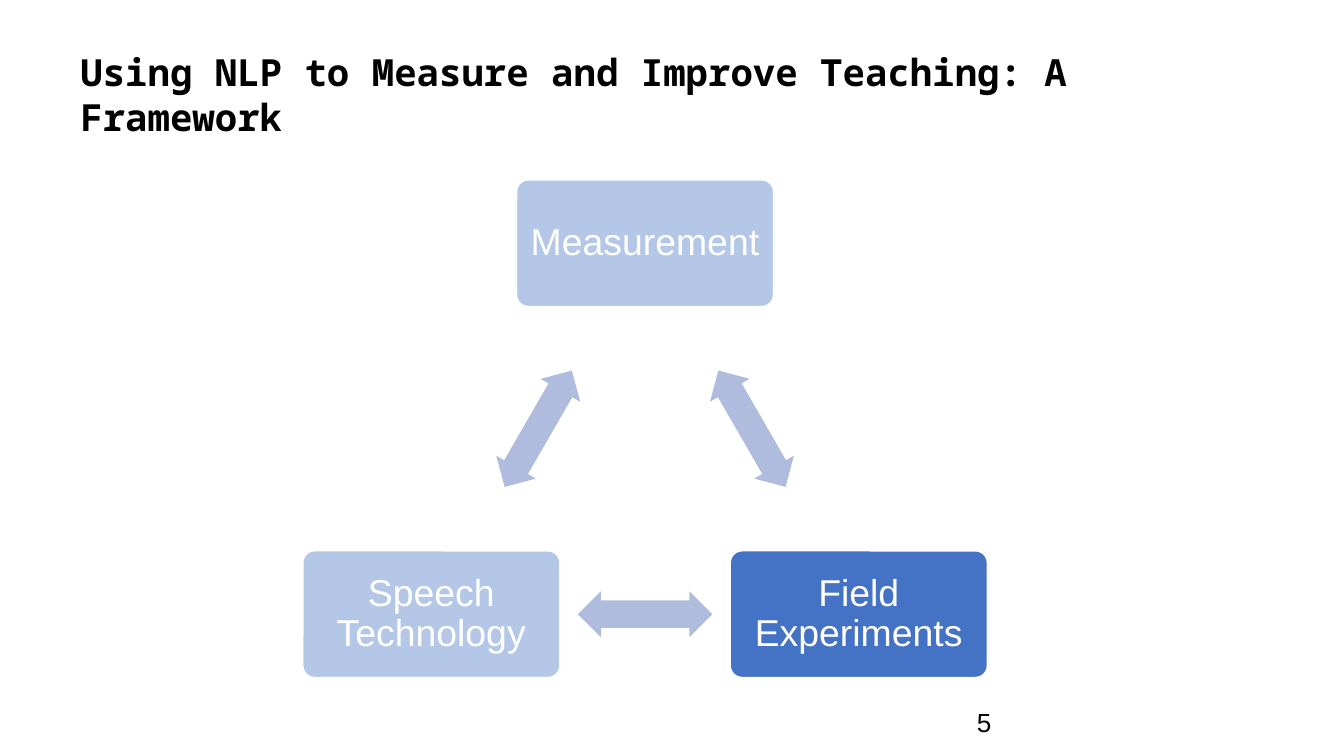
from typing import NamedTuple

from pptx import Presentation
from pptx.dml.color import RGBColor
from pptx.enum.shapes import MSO_SHAPE as Shape
from pptx.enum.text import MSO_ANCHOR as Anchor, PP_ALIGN as Align
from pptx.util import Inches, Pt

BLACK = RGBColor(0x00, 0x00, 0x00)
WHITE = RGBColor(0xFF, 0xFF, 0xFF)
FADED = RGBColor(0xB4, 0xC7, 0xE7)
ACTIVE = RGBColor(0x44, 0x72, 0xC4)
ARROW = RGBColor(0xB0, 0xBC, 0xDE)

NODE_W, NODE_H = 1.93, 0.96
ARROW_W, ARROW_H = 1.0, 0.34


class Node(NamedTuple):
    label: str
    cx: float
    cy: float
    fill: RGBColor


# Corners of the triangle, clockwise from the top
NODES = [
    Node("Measurement", 4.8, 1.81, FADED),
    Node("Field Experiments", 6.39, 4.57, ACTIVE),
    Node("Speech Technology", 3.21, 4.57, FADED),
]
ARROW_ANGLES = [60, 180, 300]


def set_text(shape, text: str, *, size: float = 20, font: str = "Arial",
             color: RGBColor = BLACK, bold: bool = False, align=Align.LEFT,
             anchor=Anchor.TOP, inset_x: float = 0.1, inset_y: float = 0.05,
             spacing: float = 1.0) -> None:
    tf = shape.text_frame
    tf.word_wrap = True
    tf.vertical_anchor = anchor
    tf.margin_left = tf.margin_right = Inches(inset_x)
    tf.margin_top = tf.margin_bottom = Inches(inset_y)
    p = tf.paragraphs[0]
    p.alignment = align
    p.line_spacing = spacing
    r = p.add_run()
    r.text = text
    r.font.size = Pt(size)
    r.font.name = font
    r.font.bold = bold
    r.font.color.rgb = color


def add_centred(s, kind, cx: float, cy: float, w: float, h: float, fill: RGBColor):
    sp = s.shapes.add_shape(kind, Inches(cx - w / 2), Inches(cy - h / 2),
                            Inches(w), Inches(h))
    sp.shadow.inherit = False
    sp.fill.solid()
    sp.fill.fore_color.rgb = fill
    return sp


def add_node(s, node: Node) -> None:
    sp = add_centred(s, Shape.ROUNDED_RECTANGLE, node.cx, node.cy,
                     NODE_W, NODE_H, node.fill)
    sp.adjustments[0] = 0.1
    sp.line.color.rgb = WHITE
    sp.line.width = Pt(2)
    set_text(sp, node.label, color=WHITE, align=Align.CENTER,
             anchor=Anchor.MIDDLE, inset_x=0.05, spacing=0.9)


def add_arrow(s, start: Node, end: Node, angle: float) -> None:
    """Place a double arrow midway between two nodes."""
    sp = add_centred(s, Shape.LEFT_RIGHT_ARROW, (start.cx + end.cx) / 2,
                     (start.cy + end.cy) / 2, ARROW_W, ARROW_H, ARROW)
    sp.adjustments[0] = 0.6
    sp.adjustments[1] = 0.5
    sp.line.fill.background()
    sp.rotation = angle


def main() -> None:
    prs = Presentation()
    prs.slide_width = Inches(10)
    prs.slide_height = Inches(10 * 9 / 16)
    s = prs.slides.add_slide(prs.slide_layouts[6])

    # Title
    title = s.shapes.add_textbox(Inches(0.5), Inches(0.23), Inches(9), Inches(0.94))
    set_text(title, "Using NLP to Measure and Improve Teaching: A Framework",
             font="Noto Sans Mono", bold=True, anchor=Anchor.MIDDLE, inset_y=0.1)

    # Cycle of nodes and the arrows between neighbours
    for i, node in enumerate(NODES):
        add_node(s, node)
        add_arrow(s, node, NODES[(i + 1) % len(NODES)], ARROW_ANGLES[i])

    # Page number
    number = s.shapes.add_textbox(Inches(7.17), Inches(5.21), Inches(2.33), Inches(0.3))
    set_text(number, "5", size=14)

    prs.save("out.pptx")


if __name__ == "__main__":
    main()
